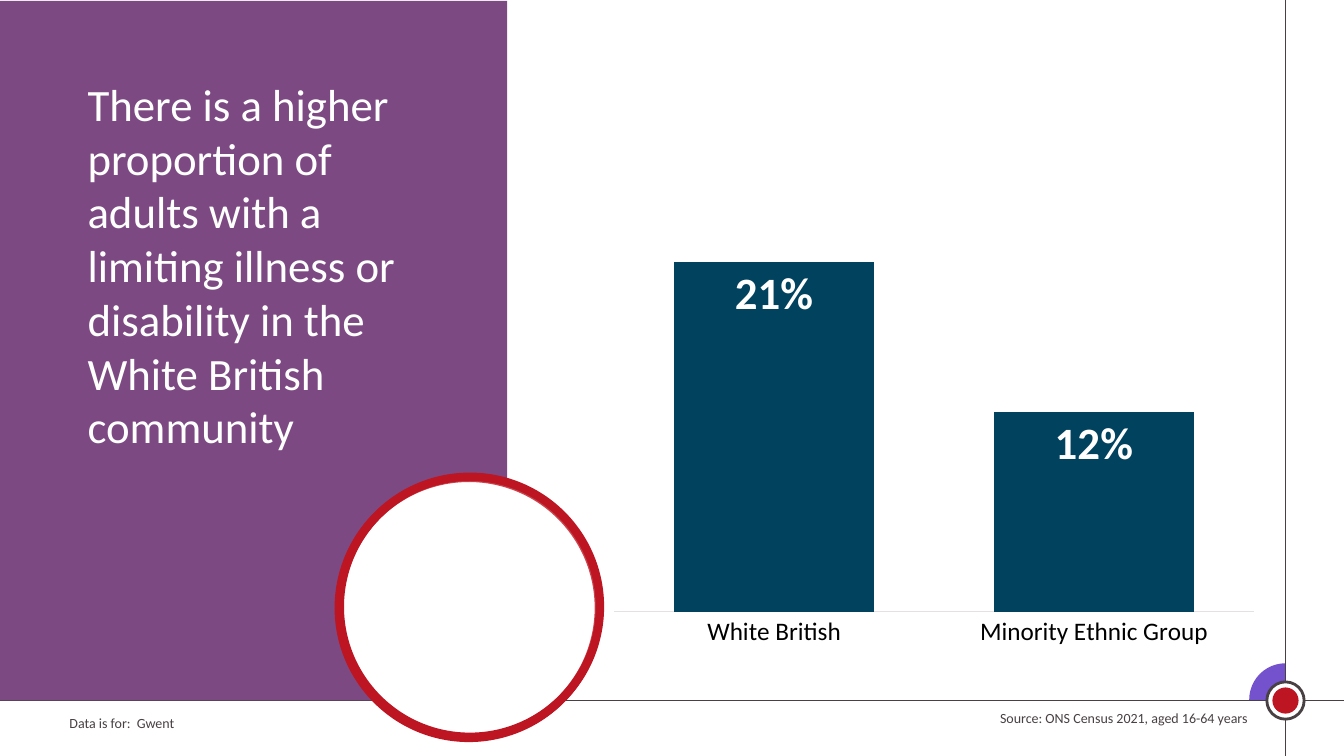
from lxml import etree
from pptx import Presentation
from pptx.chart.data import CategoryChartData
from pptx.dml.color import RGBColor
from pptx.enum.chart import XL_CHART_TYPE as ChartType
from pptx.enum.chart import XL_LABEL_POSITION as LabelPosition
from pptx.enum.chart import XL_TICK_LABEL_POSITION as TickLabels
from pptx.enum.chart import XL_TICK_MARK as TickMark
from pptx.enum.shapes import MSO_CONNECTOR as Connector
from pptx.enum.shapes import MSO_SHAPE as Shape
from pptx.enum.text import PP_ALIGN as Align
from pptx.oxml import parse_xml
from pptx.oxml.ns import nsdecls, qn
from pptx.util import Inches, Pt

WHITE = RGBColor(0xFF, 0xFF, 0xFF)
BLACK = RGBColor(0x00, 0x00, 0x00)
GREY = RGBColor(0x48, 0x40, 0x43)
PALE_GREY = RGBColor(0xE5, 0xE1, 0xE3)
PLUM = RGBColor(0x7C, 0x49, 0x82)
VIOLET = RGBColor(0x74, 0x52, 0xCD)
RED = RGBColor(0xBD, 0x16, 0x22)
NAVY = RGBColor(0x01, 0x42, 0x5F)

WIDTH, HEIGHT = 13.33, 7.5
CROSS_X, CROSS_Y = 12.75, 6.95


def set_font(font, size, color, bold=False, name="Calibri"):
    font.name, font.size, font.bold = name, Pt(size), bold
    font.color.rgb = color


class SlideBuilder:
    def __init__(self, slide):
        self.shapes = slide.shapes

    def text(self, text, left, top, width, height, size=10, color=GREY, align=Align.LEFT):
        frame = self.shapes.add_textbox(*map(Inches, (left, top, width, height))).text_frame
        frame.word_wrap = True
        paragraph = frame.paragraphs[0]
        paragraph.alignment = align
        run = paragraph.add_run()
        run.text = text
        set_font(run.font, size, color)

    def shape(self, kind, left, top, width, height, fill, line=None, weight=1, alpha=None):
        shape = self.shapes.add_shape(kind, *map(Inches, (left, top, width, height)))
        shape.shadow.inherit = False
        shape.fill.solid()
        shape.fill.fore_color.rgb = fill
        if alpha is not None:
            tint = shape._element.spPr.find(qn("a:solidFill"))[0]
            etree.SubElement(tint, qn("a:alpha")).set("val", str(alpha * 1000))
        if line is None:
            shape.line.fill.background()
        else:
            shape.line.color.rgb = line
            shape.line.width = Pt(weight)
        return shape

    def disc(self, x, y, diameter, fill, **style):
        corner = x - diameter / 2, y - diameter / 2
        return self.shape(Shape.OVAL, *corner, diameter, diameter, fill, **style)

    def line(self, x1, y1, x2, y2, color=GREY, weight=1):
        rule = self.shapes.add_connector(Connector.STRAIGHT, *map(Inches, (x1, y1, x2, y2)))
        rule.line.color.rgb = color
        rule.line.width = Pt(weight)
        etree.SubElement(rule._element.spPr, qn("a:effectLst"))

    def column_chart(self, values, left, top, width, height, maximum):
        data = CategoryChartData(number_format="0%")
        data.categories = list(values)
        data.add_series("Series 1", list(values.values()))
        chart = self.shapes.add_chart(
            ChartType.COLUMN_CLUSTERED, *map(Inches, (left, top, width, height)), data).chart
        chart.has_legend = chart.has_title = False
        set_font(chart.font, 16, GREY)

        # Axes
        groups = chart.category_axis
        groups.major_tick_mark = TickMark.NONE
        groups.format.line.color.rgb = PALE_GREY
        groups.format.line.width = Pt(0.75)
        set_font(groups.tick_labels.font, 18, BLACK)
        share = chart.value_axis
        share.minimum_scale, share.maximum_scale = 0, maximum
        share.has_major_gridlines = False
        share.tick_label_position = TickLabels.NONE
        share.visible = False

        # Columns and their labels
        plot = chart.plots[0]
        plot.gap_width = 60
        plot.vary_by_categories = False
        columns = plot.series[0]
        columns.format.fill.solid()
        columns.format.fill.fore_color.rgb = NAVY
        labels = columns.data_labels
        labels.show_value = True
        labels.position = LabelPosition.INSIDE_END
        labels.number_format, labels.number_format_is_linked = "0%", False
        set_font(labels.font, 32, WHITE, bold=True)

        # Inner plot area as fractions of the chart
        plot_area = chart._chartSpace.chart.plotArea
        for layout in plot_area.findall(qn("c:layout")):
            plot_area.remove(layout)
        plot_area.insert(0, parse_xml(
            f'<c:layout {nsdecls("c")}><c:manualLayout><c:layoutTarget val="inner"/>'
            '<c:xMode val="edge"/><c:yMode val="edge"/><c:x val="0.02"/><c:y val="0.02"/>'
            '<c:w val="0.96"/><c:h val="0.89"/></c:manualLayout></c:layout>'))


def main():
    prs = Presentation()
    prs.slide_width, prs.slide_height = Inches(WIDTH), Inches(HEIGHT)
    page = SlideBuilder(prs.slides.add_slide(prs.slide_layouts[6]))

    # Footer and crossing rules
    page.text("Data is for:\u00a0 Gwent".replace("\u00a0", " "), 0.59, 7.04, 4.39, 0.27)
    quarter = page.shape(Shape.PIE, 12.39, 6.58, 0.72, 0.72, VIOLET)
    quarter.adjustments[0], quarter.adjustments[1] = 106.62, 162
    page.line(CROSS_X, 0, CROSS_X, HEIGHT)
    page.line(0, CROSS_Y, WIDTH, CROSS_Y)
    page.disc(CROSS_X, CROSS_Y, 0.37, WHITE, line=GREY, weight=2)
    page.disc(CROSS_X, CROSS_Y, 0.26, RED)

    # Message panel with its ring
    page.shape(Shape.RECTANGLE, -0.01, 0.01, 5.04, 6.94, PLUM)
    page.disc(4.65, 6.03, 2.58, WHITE, line=RED, weight=6)
    page.disc(4.66, 6.02, 2.58, WHITE, line=RED, weight=6, alpha=20)
    page.text("There is a higher proportion of adults with a limiting illness or disability "
              "in the White British community", 0.77, 0.71, 3.77, 3.87, size=32, color=WHITE)

    # Chart and source
    page.text("Source: ONS Census 2021, aged 16-64 years", 9.52, 6.99, 2.95, 0.27,
              align=Align.RIGHT)
    page.column_chart({"White British": 0.21, "Minority Ethnic Group": 0.12},
                      5.96, 1.85, 6.61, 4.64, maximum=0.25)

    prs.save("out.pptx")


if __name__ == "__main__":
    main()
